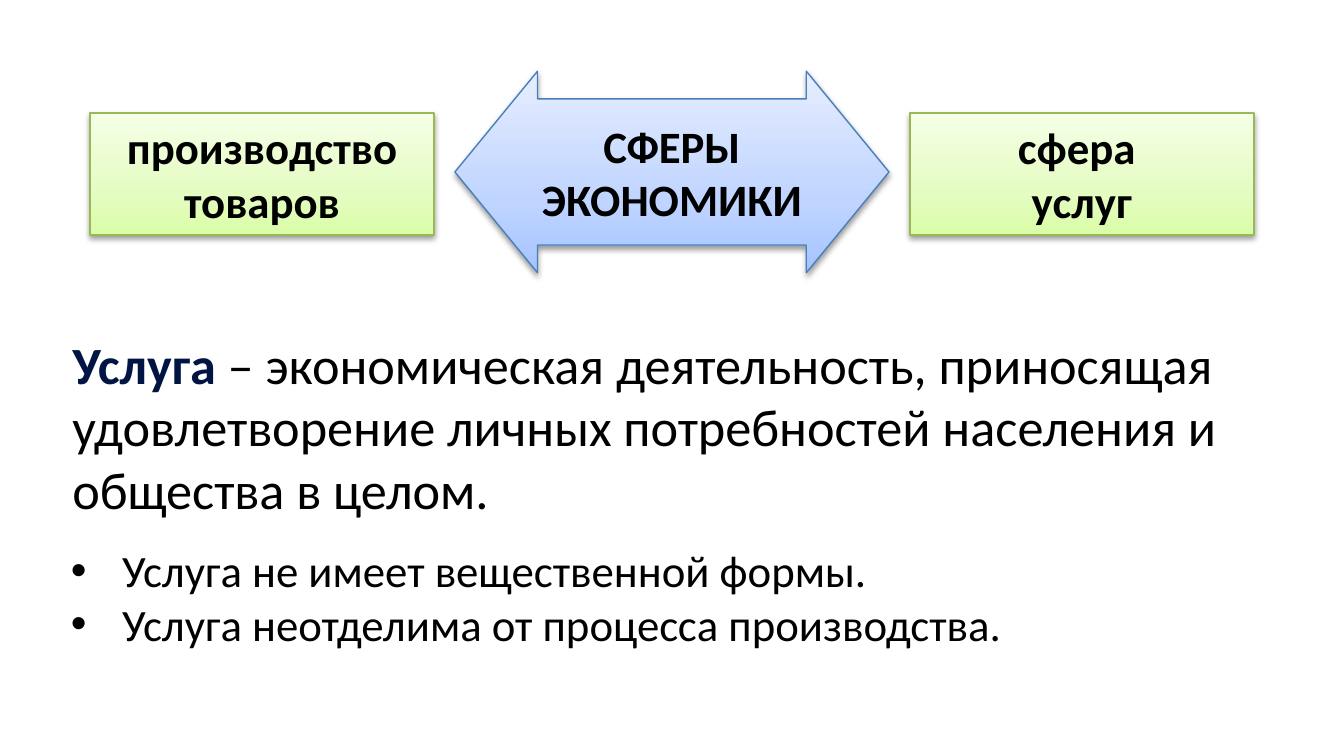
from copy import deepcopy
from dataclasses import dataclass

from pptx import Presentation
from pptx.dml.color import RGBColor
from pptx.enum import shapes, text
from pptx.oxml import parse_xml
from pptx.oxml.ns import nsdecls, qn
from pptx import util as u


@dataclass(frozen=True)
class Theme:
    font: str = "Calibri"
    ink: str = "000000"
    term: str = "001543"
    blue: tuple = ("A4C4FF", "BFD4FF", "E6EEFF")
    green: tuple = ("DAFDA7", "E4FCC2", "F5FFE7")
    blue_edge: str = "4B7EBC"
    green_edge: str = "98B955"
    edge: float = 0.75
    body: int = 24
    lead: int = 28


THEME = Theme()
WIDTH = u.Inches(10)
HEIGHT = WIDTH * 9 // 16
COLS = 100
CELL = WIDTH // COLS  # square grid cell
MID = text.MSO_ANCHOR.MIDDLE
TOP = text.MSO_ANCHOR.TOP


def place(col, row, cols, rows):
    return [round(n * CELL) for n in (col, row, cols, rows)]


def style(run, size, bold=False, color=THEME.ink):
    font = run.font
    font.name, font.size, font.bold = THEME.font, u.Pt(size), bold
    font.color.rgb = RGBColor.from_string(color)


def shade(shape, tones):
    """Fill upward with three tones, the second at 35 %."""
    fill = shape.fill
    fill.gradient()
    fill.gradient_angle = 90
    stops = shape._element.spPr.find(".//" + qn("a:gsLst"))
    stops.insert(1, deepcopy(stops[0]))
    for stop, tone, pos in zip(fill.gradient_stops, tones, (0, 0.35, 1)):
        stop.color.rgb = RGBColor.from_string(tone)
        stop.position = pos


def drop(shape):
    """Cast a soft shadow straight down."""
    shape.shadow.inherit = False
    shape._element.spPr.find(qn("a:effectLst")).append(parse_xml(
        f'<a:outerShdw {nsdecls("a")} blurRad="{u.Pt(3.1)}" '
        f'dist="{u.Pt(1.6)}" dir="5400000" rotWithShape="0">'
        '<a:srgbClr val="000000"><a:alpha val="38000"/></a:srgbClr>'
        '</a:outerShdw>'))


def block(slide, kind, box, lines, tones, edge, anchor):
    shape = slide.shapes.add_shape(kind, *place(*box))
    shade(shape, tones)
    shape.line.color.rgb = RGBColor.from_string(edge)
    shape.line.width = u.Pt(THEME.edge)
    drop(shape)
    frame = shape.text_frame
    frame.word_wrap = True
    frame.vertical_anchor = anchor
    frame.text = lines
    for par in frame.paragraphs:
        par.alignment = text.PP_ALIGN.CENTER
        style(par.runs[0], THEME.body, True)
    return shape


def note(slide, box):
    frame = slide.shapes.add_textbox(*place(*box)).text_frame
    frame.word_wrap = True
    return frame


def define(slide, box, term, rest):
    par = note(slide, box).paragraphs[0]
    for words, bold, color in ((term, True, THEME.term),
                               (rest, False, THEME.ink)):
        run = par.add_run()
        run.text = words
        style(run, THEME.lead, bold, color)


def bullets(slide, box, items):
    frame = note(slide, box)
    frame.text = "\n".join(items)
    hang = u.Inches(0.38)
    for par in frame.paragraphs:
        style(par.runs[0], THEME.body)
        props = par._p.get_or_add_pPr()
        props.set("marL", str(hang))
        props.set("indent", str(-hang))
        props.append(parse_xml(
            f'<a:buFont {nsdecls("a")} typeface="Arial"/>'))
        props.append(parse_xml(f'<a:buChar {nsdecls("a")} char="•"/>'))


def main():
    deck = Presentation()
    deck.slide_width, deck.slide_height = WIDTH, HEIGHT
    slide = deck.slides.add_slide(deck.slide_layouts[6])
    kinds = shapes.MSO_SHAPE

    span = 32.3
    arrow = block(slide, kinds.LEFT_RIGHT_ARROW,
                  ((COLS - span) / 2, 5.3, span, 15), "СФЕРЫ ЭКОНОМИКИ",
                  THEME.blue, THEME.blue_edge, MID)
    arrow.adjustments[0], arrow.adjustments[1] = 0.725, 0.41

    side, wide = 6.7, 25.6
    for col, lines in ((side, "производство товаров"),
                       (COLS - side - wide, "сфера \nуслуг")):
        block(slide, kinds.RECTANGLE, (col, 8.4, wide, 9.1), lines,
              THEME.green, THEME.green_edge, TOP)

    define(slide, (4.4, 24.2, 89, 15.1), "Услуга ",
           "– экономическая деятельность, приносящая удовлетворение "
           "личных потребностей населения и общества в целом.")
    bullets(slide, (4.3, 39.9, 89, 9.1),
            ("Услуга не имеет вещественной формы.",
             "Услуга неотделима от процесса производства."))
    deck.save("out.pptx")


if __name__ == "__main__":
    main()
